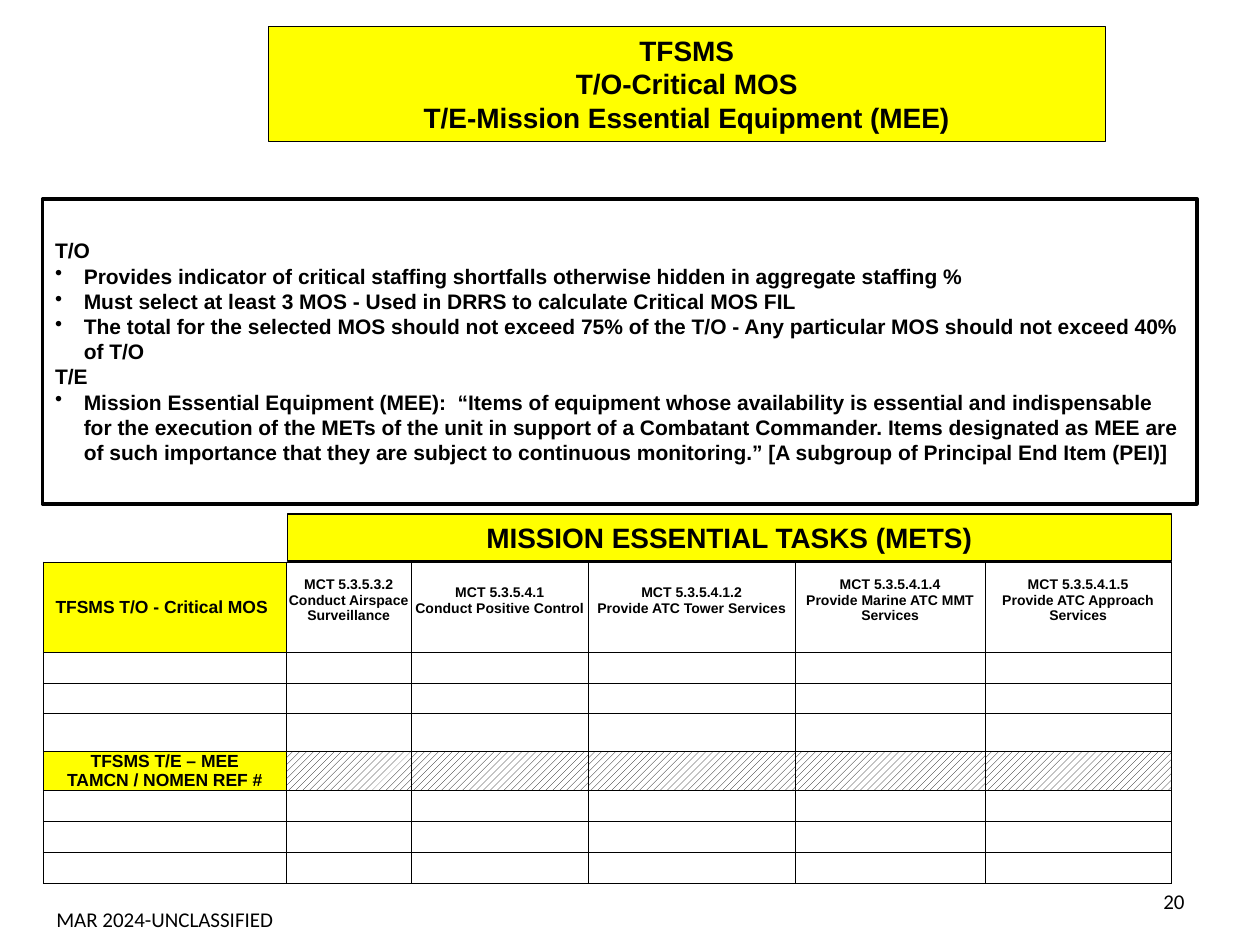
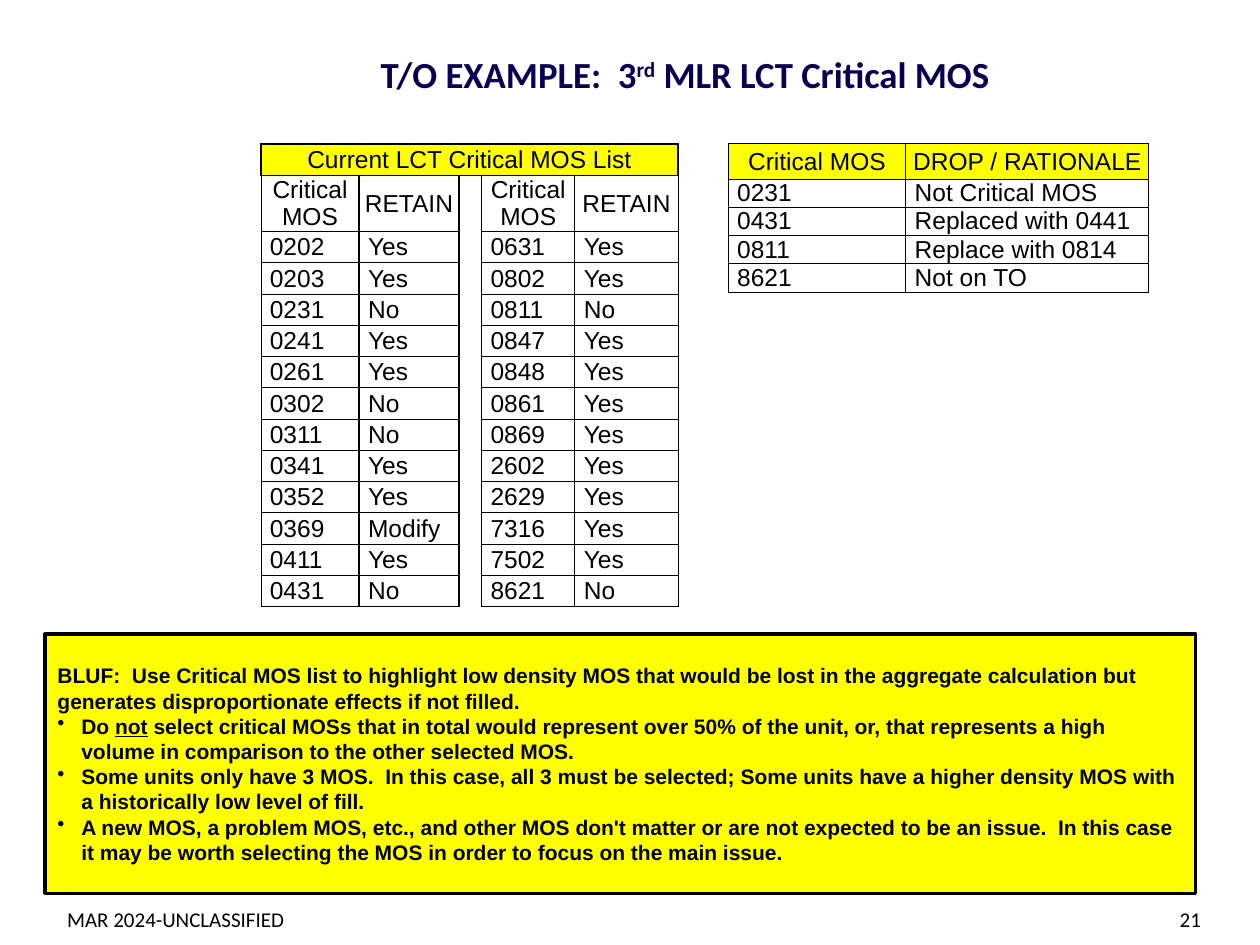
"""Build two briefing slides on critical MOS and mission essential equipment."""
from dataclasses import dataclass
from typing import NamedTuple

from lxml import etree
from pptx import Presentation
from pptx.dml.color import RGBColor
from pptx.enum.dml import MSO_PATTERN
from pptx.enum.shapes import MSO_SHAPE
from pptx.enum.text import MSO_ANCHOR, MSO_AUTO_SIZE, PP_ALIGN
from pptx.oxml.ns import qn
from pptx.util import Cm, Pt

LEFT, MID, RIGHT = PP_ALIGN.LEFT, PP_ALIGN.CENTER, PP_ALIGN.RIGHT
CENTRE = MSO_ANCHOR.MIDDLE
FIXED = MSO_AUTO_SIZE.NONE
RECT = MSO_SHAPE.RECTANGLE
HATCH = MSO_PATTERN.WIDE_UPWARD_DIAGONAL
TITLE_ONLY = 5


@dataclass(frozen=True)
class Theme:
    """Colours, fonts, type sizes and line widths of the deck."""
    ink: str = "000000"
    paper: str = "FFFFFF"
    accent: str = "FFFF00"
    navy: str = "0A0053"
    body: str = "Arial"
    plain: str = "Calibri"
    banner: float = 16
    heading: float = 21
    text: float = 12
    list: float = 14
    label: float = 10
    task: float = 8
    thin: float = 0.5
    rule: float = 0.75
    firm: float = 1
    thick: float = 2


THEME = Theme()


class Box(NamedTuple):
    """Left, top, width and height in centimetres."""
    x: float
    y: float
    w: float
    h: float

    def place(self) -> list:
        """Return the four lengths as Cm."""
        return [Cm(side) for side in self]


class Edges(NamedTuple):
    """Border widths in points, with zero for no line."""
    left: float = THEME.thin
    right: float = THEME.thin
    top: float = THEME.thin
    base: float = THEME.thin


@dataclass(frozen=True)
class Cell:
    """Text and look of one table cell."""
    text: str = ""
    fill: str = THEME.paper
    align: PP_ALIGN = LEFT
    size: float = THEME.list
    bold: bool = False
    pad: float = 0
    foot: float = 0
    hatch: bool = False
    edges: Edges = Edges()


@dataclass(frozen=True)
class Grid:
    """Place, column widths, row heights and cells of one table."""
    x: float
    y: float
    cols: list[float]
    rows: list[float]
    cells: list[list[Cell]]
    span: bool = False


def put(frame, text: str, *, size: float, font: str = THEME.body, color: str = THEME.ink,
        bold: bool = False, align: PP_ALIGN = LEFT, indent: float = 0, mark: str = "") -> None:
    """Write lines of text, with bullets and with underlined or raised parts between bars."""
    for num, line in enumerate(text.split("\n")):
        par = frame.add_paragraph() if num else frame.paragraphs[0]
        par.alignment = align
        if line.startswith("•"):
            line = line[1:]
            props = par._p.get_or_add_pPr()
            props.set("marL", str(Cm(indent)))
            props.set("indent", str(-Cm(indent)))
            etree.SubElement(props, qn("a:buChar"), char="•")
        for part, chunk in enumerate(line.split("|")):
            if not chunk:
                continue
            run = par.add_run()
            run.text = chunk
            run.font.name, run.font.size, run.font.bold = font, Pt(size), bold
            run.font.color.rgb = RGBColor.from_string(color)
            if part % 2 and mark == "under":
                run.font.underline = True
            elif part % 2 and mark == "raise":
                run._r.get_or_add_rPr().set("baseline", "30000")
        if not line:
            etree.SubElement(par._p, qn("a:endParaRPr"), sz=str(int(size * 100)))


def dress(shape, fill: str = "", width: float = 0) -> None:
    """Give a shape its fill, outline and text frame settings."""
    if fill:
        shape.fill.solid()
        shape.fill.fore_color.rgb = RGBColor.from_string(fill)
    else:
        shape.fill.background()
    if width:
        shape.line.color.rgb = RGBColor.from_string(THEME.ink)
        shape.line.width = Pt(width)
    frame = shape.text_frame
    frame.word_wrap, frame.auto_size, frame.vertical_anchor = True, FIXED, CENTRE


def add_panel(slide, box: Box, text: str, fill: str = "", width: float = THEME.thick, **look) -> None:
    """Draw an outlined rectangle with bold text."""
    panel = slide.shapes.add_shape(RECT, *box.place())
    panel.shadow.inherit = False
    dress(panel, fill, width)
    put(panel.text_frame, text, bold=True, **look)


def set_title(slide, box: Box, text: str, fill: str = "", width: float = 0, **look) -> None:
    """Move, dress and fill the title placeholder."""
    title = slide.shapes.title
    title.left, title.top, title.width, title.height = box.place()
    dress(title, fill, width)
    put(title.text_frame, text, bold=True, align=MID, **look)


def add_note(slide, box: Box, text: str, align: PP_ALIGN) -> None:
    """Add one footer text box."""
    note = slide.shapes.add_textbox(*box.place())
    dress(note)
    put(note.text_frame, text, size=THEME.text, font=THEME.plain, align=align)


def add_foot(slide, width: float, page: str, x: float, y: float) -> None:
    """Add the marking and the page number."""
    add_note(slide, Box(0, 18.01, width, 1.02), "MAR 2024-UNCLASSIFIED", MID)
    add_note(slide, Box(x, y, 5.92, 1.02), page, RIGHT)


def draw_edges(cell, edges: Edges) -> None:
    """Set the four borders of a table cell."""
    props = cell._tc.get_or_add_tcPr()
    for tag, width in zip(("a:lnL", "a:lnR", "a:lnT", "a:lnB"), edges):
        line = etree.SubElement(props, qn(tag), w=str(Pt(width)))
        if width:
            solid = etree.SubElement(line, qn("a:solidFill"))
            etree.SubElement(solid, qn("a:srgbClr"), val=THEME.ink)
        else:
            etree.SubElement(line, qn("a:noFill"))


def draw_cell(cell, spec_cell: Cell) -> None:
    """Format and fill one table cell."""
    cell.margin_left, cell.margin_bottom = Cm(spec_cell.pad), Cm(spec_cell.foot)
    cell.margin_right = cell.margin_top = 0
    cell.vertical_anchor = CENTRE
    draw_edges(cell, spec_cell.edges)
    if spec_cell.hatch:
        cell.fill.patterned()
        cell.fill.pattern = HATCH
        cell.fill.fore_color.rgb = RGBColor.from_string(THEME.ink)
        cell.fill.back_color.rgb = RGBColor.from_string(THEME.paper)
    else:
        cell.fill.solid()
        cell.fill.fore_color.rgb = RGBColor.from_string(spec_cell.fill)
    put(cell.text_frame, spec_cell.text, size=spec_cell.size, bold=spec_cell.bold,
        align=spec_cell.align)


def draw_grid(slide, grid: Grid) -> None:
    """Draw a table from its grid."""
    box = Box(grid.x, grid.y, sum(grid.cols), sum(grid.rows))
    table = slide.shapes.add_table(len(grid.rows), len(grid.cols), *box.place()).table
    table.first_row = table.horz_banding = False
    for col, width in zip(table.columns, grid.cols):
        col.width = Cm(width)
    for row, height, cells in zip(table.rows, grid.rows, grid.cells):
        row.height = Cm(height)
        for cell, look in zip(row.cells, cells):
            draw_cell(cell, look)
    if grid.span:
        table.cell(0, 0).merge(table.cell(0, len(grid.cols) - 1))


def task_grid() -> Grid:
    """Lay out the table of mission essential tasks."""
    tasks = ["MCT 5.3.5.3.2\nConduct Airspace Surveillance",
             "MCT 5.3.5.4.1\nConduct Positive Control",
             "MCT 5.3.5.4.1.2\nProvide ATC Tower Services",
             "MCT 5.3.5.4.1.4\nProvide Marine ATC MMT Services",
             "MCT 5.3.5.4.1.5\nProvide ATC Approach Services"]
    head = [Cell("TFSMS T/O - Critical MOS", THEME.accent, size=THEME.label, bold=True, pad=0.25)]
    head += [Cell(task, align=MID, size=THEME.task, bold=True, foot=0.28) for task in tasks]
    gear = [Cell("TFSMS T/E – MEE\nTAMCN / NOMEN REF #", THEME.accent, MID, THEME.label, True)]
    gear += [Cell(size=THEME.task, hatch=True)] * len(tasks)
    blank = [[Cell(size=THEME.task)] * len(head)] * 3
    return Grid(0.87, 11.33, [4.9, 2.52, 3.57, 4.17, 3.83, 3.75],
                [1.82, 0.62, 0.62, 0.76, 0.79, 0.62, 0.62, 0.62],
                [head, *blank, gear, *blank])


def list_grid() -> Grid:
    """Lay out the list of current MOS in two halves."""
    first = ["0202 Yes", "0203 Yes", "0231 No", "0241 Yes", "0261 Yes", "0302 No",
             "0311 No", "0341 Yes", "0352 Yes", "0369 Modify", "0411 Yes", "0431 No"]
    second = ["0631 Yes", "0802 Yes", "0811 No", "0847 Yes", "0848 Yes", "0861 Yes",
              "0869 Yes", "2602 Yes", "2629 Yes", "7316 Yes", "7502 Yes", "8621 No"]
    thin, firm = THEME.thin, THEME.firm
    sides = [(thin, firm), (firm, firm), (firm, firm), (firm, thin), (thin, thin)]
    rules = [thin, thin, 0, thin, thin]
    names = ["Critical MOS", "RETAIN", "", "Critical MOS", "RETAIN"]
    top = [Cell(text, THEME.accent, MID, edges=Edges(firm, firm, firm, firm))
           for text in ("Current LCT Critical MOS List", "", "", "", "")]
    head = [Cell(name, align=MID, edges=Edges(*side, firm, rule))
            for name, side, rule in zip(names, sides, rules)]
    rows = [[Cell(text, pad=0.18, edges=Edges(*side, rule, rule))
             for text, side, rule in zip([*one.split(), "", *two.split()], sides, rules)]
            for one, two in zip(first, second)]
    return Grid(5.26, 2.9, [1.98, 2.01, 0.46, 1.88, 2.08], [0.64, 1.13] + [0.63] * len(rows),
                [top, head, *rows], span=True)


def drop_grid() -> Grid:
    """Lay out the table of dropped MOS."""
    drops = [("0231", "Not Critical MOS"), ("0431", "Replaced with 0441"),
             ("0811", "Replace with 0814"), ("8621", "Not on TO")]
    head = [Cell(name, THEME.accent, MID) for name in ("Critical MOS", "DROP / RATIONALE")]
    rows = [[Cell(text, pad=0.18) for text in drop] for drop in drops]
    return Grid(14.68, 2.9, [3.58, 4.9], [0.71] + [0.57] * len(rows), [head, *rows])


def build_rules(slide) -> None:
    """Build the slide on T/O and T/E rules."""
    set_title(slide, Box(5.41, 0.53, 16.87, 2.32),
              "TFSMS\nT/O-Critical MOS\nT/E-Mission Essential Equipment (MEE)",
              THEME.accent, THEME.rule, size=THEME.banner)
    add_panel(slide, Box(0.86, 4.01, 23.27, 6.15), """T/O
•Provides indicator of critical staffing shortfalls otherwise hidden in aggregate staffing %
•Must select at least 3 MOS - Used in DRRS to calculate Critical MOS FIL
•The total for the selected MOS should not exceed 75% of the T/O - Any particular MOS should not exceed 40% of T/O
T/E
•Mission Essential Equipment (MEE):  “Items of equipment whose availability is essential and indispensable for the execution of the METs of the unit in support of a Combatant Commander. Items designated as MEE are of such importance that they are subject to continuous monitoring.” [A subgroup of Principal End Item (PEI)]""",
              size=THEME.text, indent=0.58)
    add_panel(slide, Box(5.79, 10.36, 17.83, 0.95), "MISSION ESSENTIAL TASKS (METS)",
              THEME.accent, THEME.rule, size=THEME.banner, align=MID)
    draw_grid(slide, task_grid())
    add_foot(slide, 6.65, "20", 18.21, 17.65)


def build_sample(slide) -> None:
    """Build the slide with the T/O example."""
    set_title(slide, Box(3.51, 0.53, 20.6, 1.91), "T/O EXAMPLE:  3|rd| MLR LCT Critical MOS",
              size=THEME.heading, font=THEME.plain, color=THEME.navy, mark="raise")
    draw_grid(slide, list_grid())
    draw_grid(slide, drop_grid())
    add_panel(slide, Box(0.91, 12.78, 23.19, 5.23), """BLUF:  Use Critical MOS list to highlight low density MOS that would be lost in the aggregate calculation but generates disproportionate effects if not filled.
•Do |not| select critical MOSs that in total would represent over 50% of the unit, or, that represents a high volume in comparison to the other selected MOS.
•Some units only have 3 MOS.  In this case, all 3 must be selected; Some units have a higher density MOS with a historically low level of fill.
•A new MOS, a problem MOS, etc., and other MOS don't matter or are not expected to be an issue.  In this case it may be worth selecting the MOS in order to focus on the main issue.""",
              THEME.accent, size=THEME.text, indent=0.48, mark="under")
    add_foot(slide, 7.09, "21", 18.54, 18.01)


def main() -> None:
    """Build and save the deck."""
    deck = Presentation()
    deck.slide_width, deck.slide_height = Cm(25.4), Cm(19.05)
    for build in (build_rules, build_sample):
        build(deck.slides.add_slide(deck.slide_layouts[TITLE_ONLY]))
    deck.save("out.pptx")


if __name__ == "__main__":
    main()
